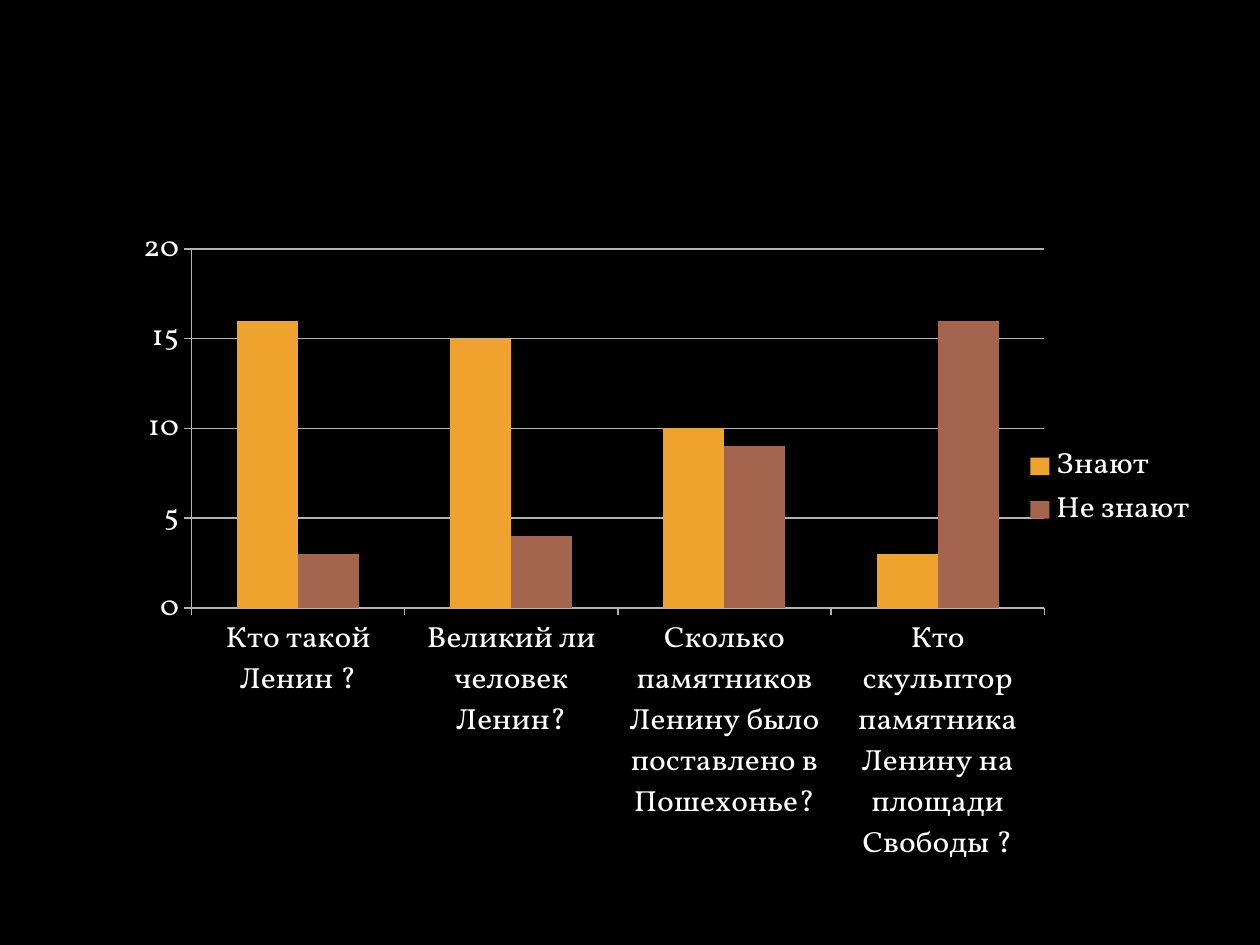
"""Build a slide with a column chart of survey answers."""
from lxml import etree
from pptx import Presentation
from pptx import util as u
from pptx.chart.data import CategoryChartData
from pptx.dml.color import RGBColor
from pptx.enum import chart as ch
from pptx.oxml.ns import qn

COLORS = {"background": "000000", "text": "FFFFFF", "lines": "B3B3B3",
          "know": "F0A22E", "unknown": "A5644E"}


def rgb(name):
    return RGBColor.from_string(COLORS[name])


def place(parent, index, **layout_values):
    for old in parent.findall(qn("c:layout")):
        parent.remove(old)
    layout = etree.Element(qn("c:layout"))
    manual = etree.SubElement(layout, qn("c:manualLayout"))
    for tag, value in layout_values.items():
        etree.SubElement(manual, qn(f"c:{tag}")).set("val", str(value))
    parent.insert(index, layout)


prs = Presentation()
prs.slide_width, prs.slide_height = u.Inches(10), u.Inches(7.5)
slide = prs.slides.add_slide(prs.slide_layouts[6])
slide.background.fill.solid()
slide.background.fill.fore_color.rgb = rgb("background")

answers = CategoryChartData()
answers.categories = [
    "Кто такой Ленин ?",
    "Великий ли человек Ленин?",
    "Сколько памятников Ленину было поставлено в Пошехонье?",
    "Кто скульптор памятника Ленину на площади Свободы ?",
]
answers.add_series("Знают", (16, 15, 10, 3))
answers.add_series("Не знают", (3, 4, 9, 16))

survey = slide.shapes.add_chart(
    ch.XL_CHART_TYPE.COLUMN_CLUSTERED, u.Inches(0.62), u.Inches(1.72),
    u.Inches(9), u.Inches(5.15), answers).chart
survey.has_title = False
survey.font.name = "Vollkorn"
survey.font.size = u.Pt(18)
survey.font.color.rgb = rgb("text")

columns = survey.plots[0]
columns.vary_by_categories = False
columns.gap_width = 150
columns.overlap = 0
for series, color in zip(columns.series, ("know", "unknown")):
    series.format.fill.solid()
    series.format.fill.fore_color.rgb = rgb(color)

counts, questions = survey.value_axis, survey.category_axis
counts.minimum_scale, counts.maximum_scale, counts.major_unit = 0, 20, 5
counts.has_major_gridlines = True
for line in (counts.format.line, questions.format.line,
             counts.major_gridlines.format.line):
    line.color.rgb = rgb("lines")
    line.width = u.Pt(0.75)
for axis in (counts, questions):
    axis.major_tick_mark = ch.XL_TICK_MARK.OUTSIDE

survey.has_legend = True
survey.legend.position = ch.XL_LEGEND_POSITION.RIGHT
survey.legend.include_in_layout = False

plot_area = survey.element.find(".//" + qn("c:plotArea"))
place(plot_area, 0, layoutTarget="inner", xMode="edge", yMode="edge",
      x=0.1, y=0.054, w=0.752, h=0.602)
legend_area = survey.element.find(".//" + qn("c:legend"))
place(legend_area, 1, xMode="edge", yMode="edge", x=0.83, y=0.38, w=0.16, h=0.15)

prs.save("out.pptx")
